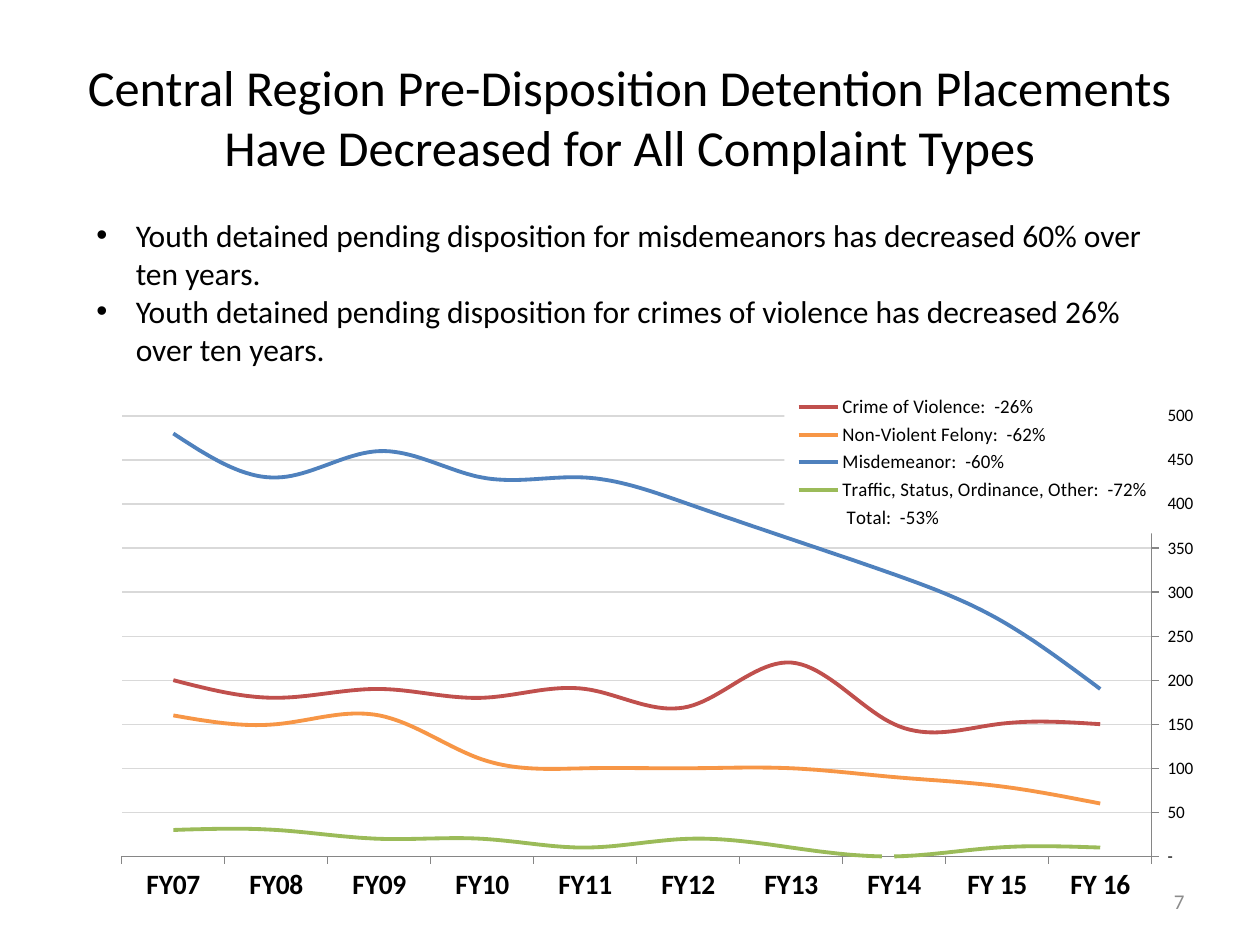
from dataclasses import dataclass

from lxml import etree
from pptx import Presentation
from pptx.chart.data import CategoryChartData
from pptx.dml.color import RGBColor
from pptx.enum.chart import (XL_AXIS_CROSSES, XL_CHART_TYPE, XL_LEGEND_POSITION,
                             XL_MARKER_STYLE, XL_TICK_MARK)
from pptx.enum.text import MSO_ANCHOR, PP_ALIGN
from pptx.oxml import parse_xml
from pptx.oxml.ns import nsdecls, qn
from pptx.util import Pt

LINE_CHART = XL_CHART_TYPE.LINE
LEGEND_RIGHT = XL_LEGEND_POSITION.RIGHT
NO_MARKER = XL_MARKER_STYLE.NONE
TICK_OUT = XL_TICK_MARK.OUTSIDE
TICK_NONE = XL_TICK_MARK.NONE
CROSS_AT_MAXIMUM = XL_AXIS_CROSSES.MAXIMUM
TOP, MIDDLE = MSO_ANCHOR.TOP, MSO_ANCHOR.MIDDLE
LEFT, CENTER, RIGHT = PP_ALIGN.LEFT, PP_ALIGN.CENTER, PP_ALIGN.RIGHT

FONT = "Calibri"
BLACK, WHITE, GRAY = "000000", "FFFFFF", "8C8C8C"
AXIS_GRAY, GRID_GRAY = "868686", "D9D9D9"
NUMBER_FORMAT = r'_(* #,##0_);_(* \(#,##0\);_(* "-"??_);_(@_)'


@dataclass
class TextBlock:
    left: float
    top: float
    width: float
    height: float
    lines: list[str]
    size: float
    color: str = BLACK
    align: PP_ALIGN = LEFT
    anchor: MSO_ANCHOR = MIDDLE
    bullet_indent: float = 0


@dataclass
class Trend:
    name: str
    color: str
    values: list[int]


TEXT_BLOCKS = [
    TextBlock(36, 21.6, 648, 90,
              ["Central Region Pre-Disposition Detention Placements "
               "Have Decreased for All Complaint Types"], 28.8, align=CENTER),
    TextBlock(516, 500.5, 168, 28.8, ["7"], 12, GRAY, RIGHT),
    TextBlock(48, 120, 630, 94.5,
              ["Youth detained pending disposition for misdemeanors has "
               "decreased 60% over ten years.",
               "Youth detained pending disposition for crimes of violence has "
               "decreased 26% over ten years."], 18, anchor=TOP, bullet_indent=22.5),
]

# Latest year first; the category axis runs in reverse
YEARS = ["FY 16", "FY 15", "FY14", "FY13", "FY12",
         "FY11", "FY10", "FY09", "FY08", "FY07"]
TRENDS = [
    Trend("Crime of Violence:  -26%", "C0504D",
          [150, 150, 150, 220, 170, 190, 180, 190, 180, 200]),
    Trend("Non-Violent Felony:  -62%", "F79646",
          [60, 80, 90, 100, 100, 100, 110, 160, 150, 160]),
    Trend("Misdemeanor:  -60%", "4F81BD",
          [190, 270, 320, 360, 400, 430, 430, 460, 430, 480]),
    Trend("Traffic, Status, Ordinance, Other:  -72%", "9BBB59",
          [10, 10, 0, 10, 20, 10, 20, 20, 30, 30]),
    Trend(" Total:  -53%", WHITE,
          [410, 500, 570, 690, 690, 730, 740, 820, 790, 870]),
]


def rgb(color: str) -> RGBColor:
    return RGBColor.from_string(color)


def style_font(font, size: float, color: str = BLACK, bold: bool = False) -> None:
    font.name, font.size, font.bold = FONT, Pt(size), bold
    font.color.rgb = rgb(color)


def style_line(line, color: str, width: float) -> None:
    line.color.rgb = rgb(color)
    line.width = Pt(width)


def add_bullet(para, indent: float) -> None:
    properties = para._p.get_or_add_pPr()
    properties.set("marL", str(Pt(indent)))
    properties.set("indent", str(-Pt(indent)))
    etree.SubElement(properties, qn("a:buFont")).set("typeface", "Arial")
    etree.SubElement(properties, qn("a:buChar")).set("char", "•")


def add_text(page, block: TextBlock) -> None:
    box = page.shapes.add_textbox(Pt(block.left), Pt(block.top),
                                  Pt(block.width), Pt(block.height))
    frame = box.text_frame
    frame.word_wrap = True
    frame.vertical_anchor = block.anchor
    for index, line in enumerate(block.lines):
        para = frame.add_paragraph() if index else frame.paragraphs[0]
        para.alignment = block.align
        if block.bullet_indent:
            add_bullet(para, block.bullet_indent)
        span = para.add_run()
        span.text = line
        style_font(span.font, block.size, block.color)


def manual_layout(left: float, top: float, width: float, height: float,
                  target: str = ""):
    """Layout element in fractions of the chart area."""
    inner = f'<c:layoutTarget val="{target}"/>' if target else ""
    return parse_xml(
        f'<c:layout {nsdecls("c")}><c:manualLayout>{inner}'
        '<c:xMode val="edge"/><c:yMode val="edge"/>'
        f'<c:x val="{left}"/><c:y val="{top}"/>'
        f'<c:w val="{width}"/><c:h val="{height}"/>'
        '</c:manualLayout></c:layout>')


def style_axis(axis, size: float, bold: bool = False) -> None:
    axis.major_tick_mark, axis.minor_tick_mark = TICK_OUT, TICK_NONE
    style_font(axis.tick_labels.font, size, bold=bold)
    style_line(axis.format.line, AXIS_GRAY, 0.75)


def style_legend(chart) -> None:
    chart.has_legend = True
    legend = chart.legend
    legend.position = LEGEND_RIGHT
    legend.include_in_layout = False
    style_font(legend.font, 11)
    element = legend._element
    for old in element.findall(qn("c:layout")):
        element.remove(old)
    element.find(qn("c:legendPos")).addnext(manual_layout(0.65, 0.03, 0.34, 0.27))
    element.find(qn("c:txPr")).addprevious(parse_xml(
        f'<c:spPr {nsdecls("c", "a")}><a:solidFill><a:srgbClr val="{WHITE}"/>'
        '</a:solidFill></c:spPr>'))


def add_trend_chart(page) -> None:
    data = CategoryChartData()
    data.categories = YEARS
    for trend in TRENDS:
        data.add_series(trend.name, trend.values)
    chart = page.shapes.add_chart(LINE_CHART, Pt(36), Pt(214.5),
                                  Pt(648), Pt(301.5), data).chart
    chart.has_title = False
    style_font(chart.font, 10)

    # Series
    plot = chart.plots[0]
    plot.vary_by_categories = False
    for series, trend in zip(plot.series, TRENDS):
        series.smooth = True
        series.marker.style = NO_MARKER
        style_line(series.format.line, trend.color, 2.25)

    # Axes
    years, counts = chart.category_axis, chart.value_axis
    style_axis(years, 16, bold=True)
    years.reverse_order = True
    years.crosses = CROSS_AT_MAXIMUM
    style_axis(counts, 10)
    counts.minimum_scale, counts.maximum_scale, counts.major_unit = 0, 500, 50
    counts.tick_labels.number_format = NUMBER_FORMAT
    counts.tick_labels.number_format_is_linked = False
    style_line(counts.major_gridlines.format.line, GRID_GRAY, 0.75)

    # Plot area and legend
    area = chart._chartSpace.chart.plotArea
    for old in area.findall(qn("c:layout")):
        area.remove(old)
    area.insert(0, manual_layout(0.053, 0.077, 0.928, 0.836, "inner"))
    style_legend(chart)


def main() -> None:
    deck = Presentation()
    deck.slide_width, deck.slide_height = Pt(720), Pt(540)
    page = deck.slides.add_slide(deck.slide_layouts[6])
    add_trend_chart(page)
    for block in TEXT_BLOCKS:
        add_text(page, block)
    deck.save("out.pptx")


if __name__ == "__main__":
    main()
